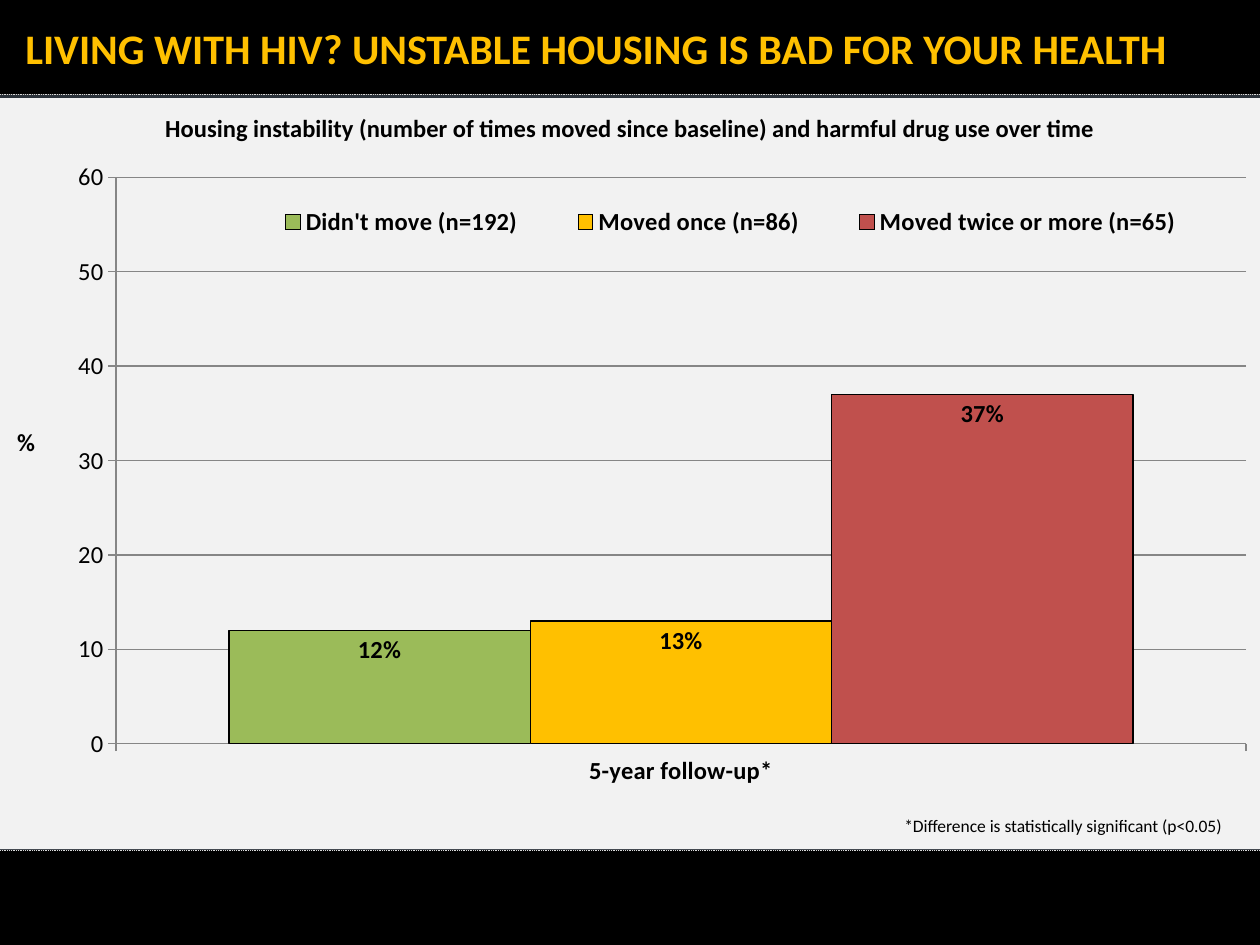
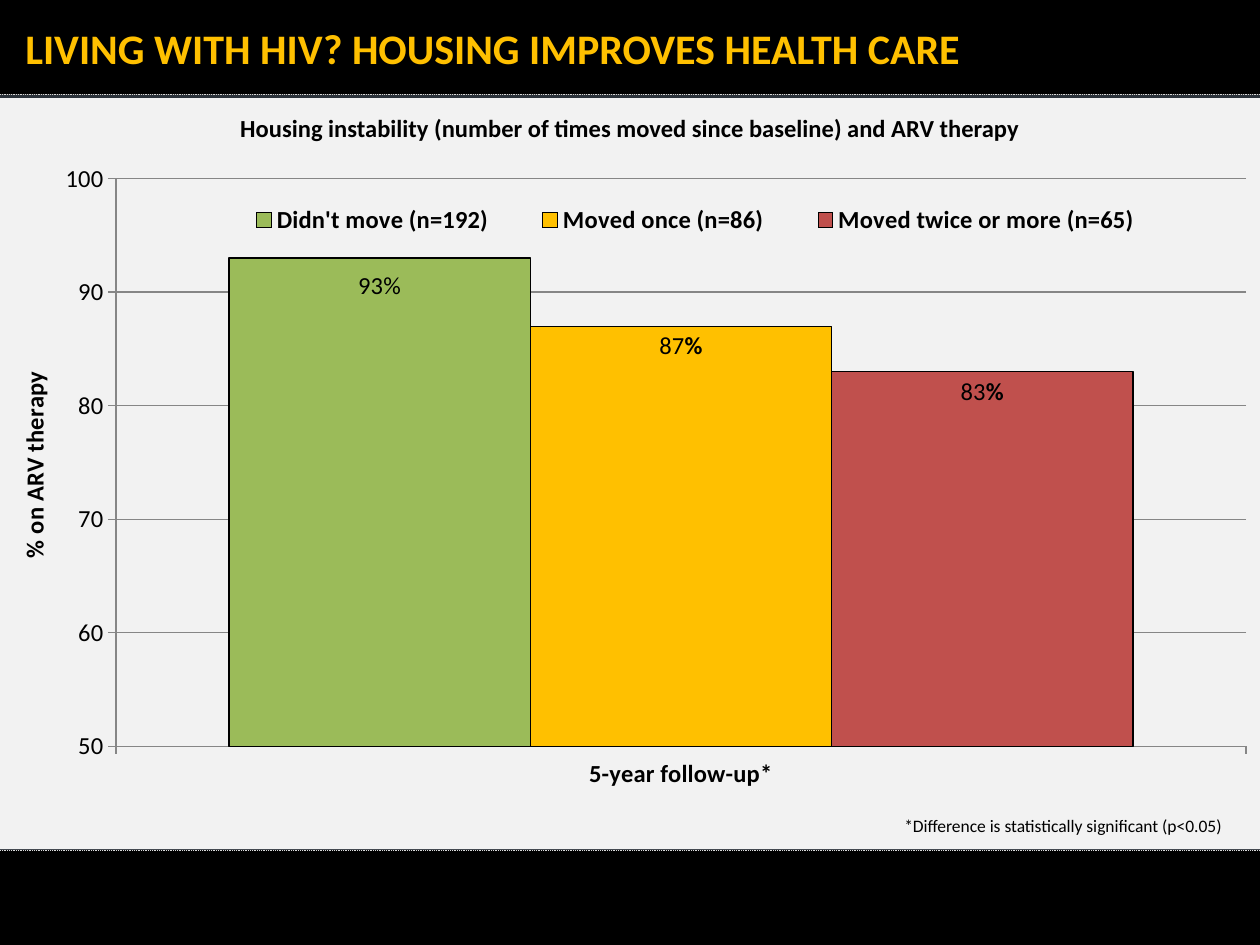
from lxml import etree
from pptx import Presentation
from pptx.chart.data import CategoryChartData
from pptx.dml.color import RGBColor
from pptx.enum.chart import XL_CHART_TYPE, XL_LABEL_POSITION, XL_LEGEND_POSITION, XL_TICK_MARK
from pptx.enum.dml import MSO_LINE
from pptx.enum.shapes import MSO_CONNECTOR, MSO_SHAPE
from pptx.enum.text import MSO_ANCHOR, MSO_AUTO_SIZE, PP_ALIGN
from pptx.oxml.ns import qn
from pptx.util import Cm, Pt

COLORS = {
    "band": "000000", "backdrop": "2C333B", "panel": "F2F2F2", "rule": "D9D9D9",
    "title": "FFC000", "text": "000000", "grid": "868686",
    "no_move": "9BBB59", "one_move": "FFC000", "more_moves": "C0504D",
}
WIDTH, HEIGHT = 25.4, 19.05
BAND = 1.91
TITLE_FONT = {"name": "Calibri", "size": Pt(24), "bold": True}
CHART_FONT = {"name": "Calibri", "size": Pt(14), "bold": False}
BOLD_FONT = {**CHART_FONT, "bold": True}
NOTE_FONT = {**CHART_FONT, "size": Pt(10)}
GROUPS = [
    ("Didn't move (n=192)", "no_move"),
    ("Moved once (n=86)", "one_move"),
    ("Moved twice or more (n=65)", "more_moves"),
]
CATEGORY = "5-year follow-up*"
FOOTNOTE = "*Difference is statistically significant (p<0.05)"

# Each bar is (value, number is bold, percent sign is bold).
SLIDES = [
    {
        "title": "LIVING WITH HIV? UNSTABLE HOUSING IS BAD FOR YOUR HEALTH",
        "heading": "Housing instability (number of times moved since baseline) "
                   "and harmful drug use over time",
        "box": (0, 2.11, WIDTH, 14.81),
        "bars": [(12, True, True), (13, True, True), (37, True, True)],
        "scale": (0, 60),
        "axis_title": "%", "axis_rotation": 0, "axis_title_at": (0.01, 0.43),
        "plot": (0.092, 0.099, 0.897, 0.771),
        "legend": (0.185, 0.12, 0.79, 0.08),
    },
    {
        "title": "LIVING WITH HIV? HOUSING IMPROVES HEALTH CARE",
        "heading": "Housing instability (number of times moved since baseline) "
                   "and ARV therapy",
        "box": (0, BAND, WIDTH, 15.24),
        "bars": [(93, False, False), (87, False, True), (83, False, True)],
        "scale": (50, 100),
        "axis_title": "% on ARV therapy", "axis_rotation": -90, "axis_title_at": (0.01, 0.36),
        "plot": (0.092, 0.111, 0.897, 0.751),
        "legend": (0.167, 0.126, 0.77, 0.08),
        "first_label_shift": (0, 0.01),
    },
]


def color(name):
    return RGBColor.from_string(COLORS[name])


def format_font(font, values, color_name="text"):
    for key, value in values.items():
        setattr(font, key, value)
    font.color.rgb = color(color_name)


def add_band(slide, top, height, fill):
    shape = slide.shapes.add_shape(MSO_SHAPE.RECTANGLE, 0, Cm(top), Cm(WIDTH), Cm(height))
    shape.shadow.inherit = False
    shape.fill.solid()
    shape.fill.fore_color.rgb = color(fill)
    shape.line.fill.background()
    return shape


def add_rule(slide, top):
    connector = slide.shapes.add_connector(
        MSO_CONNECTOR.STRAIGHT, 0, Cm(top), Cm(WIDTH), Cm(top))
    connector.line.color.rgb = color("rule")
    connector.line.width = Pt(0.5)
    connector.line.dash_style = MSO_LINE.ROUND_DOT
    etree.SubElement(connector.element.spPr, qn("a:effectLst"))
    return connector


def style_layout(layout, slide):
    """Draw the bands with the slide's shape tools, then move them to the layout."""
    bottom = HEIGHT - BAND
    parts = [
        add_band(slide, bottom, BAND, "band"),
        add_band(slide, BAND, bottom - BAND, "backdrop"),
        add_band(slide, 0, BAND, "band"),
        add_rule(slide, BAND),
        add_rule(slide, bottom),
        add_band(slide, 1.98, 15.14, "panel"),
    ]
    for index, part in enumerate(parts):
        part.element.xpath(".//p:cNvPr")[0].set("id", str(100 + index))
        layout.shapes.element.insert(2 + index, part.element)

    title = layout.placeholders[0]
    title.left, title.top, title.width, title.height = 0, 0, Cm(WIDTH), Cm(BAND)
    frame = title.text_frame
    frame_format = {
        "margin_left": Cm(0.51), "margin_right": Cm(0.51),
        "margin_top": Cm(0.25), "margin_bottom": Cm(0.25),
        "vertical_anchor": MSO_ANCHOR.MIDDLE, "auto_size": MSO_AUTO_SIZE.NONE,
    }
    for key, value in frame_format.items():
        setattr(frame, key, value)


def fill_title(slide, text):
    paragraph = slide.shapes.title.text_frame.paragraphs[0]
    paragraph.text = text
    paragraph.alignment = PP_ALIGN.LEFT
    format_font(paragraph.runs[0].font, TITLE_FONT, "title")


def add_text(slide, box, text, font, alignment):
    frame = slide.shapes.add_textbox(*map(Cm, box)).text_frame
    frame.word_wrap = True
    paragraph = frame.paragraphs[0]
    paragraph.text = text
    paragraph.alignment = alignment
    format_font(paragraph.runs[0].font, font)


def set_layout(parent, index, box, inner=False):
    """Place a chart part by fractions of the chart: x, y and optionally w, h."""
    for old in parent.findall(qn("c:layout")):
        parent.remove(old)
    layout = etree.Element(qn("c:layout"))
    manual = etree.SubElement(layout, qn("c:manualLayout"))
    values = [("layoutTarget", "inner")] if inner else []
    if parent.tag != qn("c:dLbl"):
        values += [("xMode", "edge"), ("yMode", "edge")]
    values += zip("xywh", box)
    for name, value in values:
        etree.SubElement(manual, qn(f"c:{name}")).set("val", str(value))
    parent.insert(index, layout)


def format_axes(chart, content):
    for axis, font in ((chart.category_axis, BOLD_FONT), (chart.value_axis, CHART_FONT)):
        axis.major_tick_mark = XL_TICK_MARK.OUTSIDE
        axis.minor_tick_mark = XL_TICK_MARK.NONE
        axis.format.line.color.rgb = color("grid")
        format_font(axis.tick_labels.font, font)
    axis = chart.value_axis
    axis.minimum_scale, axis.maximum_scale = content["scale"]
    axis.major_unit = 10
    axis.has_major_gridlines = True
    axis.major_gridlines.format.line.color.rgb = color("grid")
    paragraph = axis.axis_title.text_frame.paragraphs[0]
    run = paragraph.add_run()
    run.text = content["axis_title"]
    format_font(run.font, BOLD_FONT)
    title = chart.element.xpath(".//c:valAx/c:title")[0]
    body = title.xpath(".//a:bodyPr")[0]
    body.set("rot", str(content["axis_rotation"] * 60000))
    body.set("vert", "horz")
    set_layout(title, 1, content["axis_title_at"])


def format_bar(series, fill, bar):
    series.format.fill.solid()
    series.format.fill.fore_color.rgb = color(fill)
    series.format.line.color.rgb = color("text")
    series.format.line.width = Pt(0.75)
    value, bold_number, bold_percent = bar
    label = series.points[0].data_label
    paragraph = label.text_frame.paragraphs[0]
    for text, bold in ((str(value), bold_number), ("%", bold_percent)):
        run = paragraph.add_run()
        run.text = text
        format_font(run.font, {**CHART_FONT, "bold": bold})
    label.position = XL_LABEL_POSITION.INSIDE_END


def add_bar_chart(slide, content):
    data = CategoryChartData()
    data.categories = [CATEGORY]
    for (name, _), bar in zip(GROUPS, content["bars"]):
        data.add_series(name, [bar[0]])
    chart = slide.shapes.add_chart(
        XL_CHART_TYPE.COLUMN_CLUSTERED, *map(Cm, content["box"]), data).chart
    format_font(chart.font, CHART_FONT)
    chart.has_title = False
    plot = chart.plots[0]
    plot.gap_width, plot.overlap, plot.vary_by_categories = 75, 0, False
    for series, (_, fill), bar in zip(plot.series, GROUPS, content["bars"]):
        format_bar(series, fill, bar)
    format_axes(chart, content)
    chart.has_legend = True
    chart.legend.position = XL_LEGEND_POSITION.RIGHT
    chart.legend.include_in_layout = False
    format_font(chart.legend.font, BOLD_FONT)
    set_layout(chart.element.xpath(".//c:legend")[0], 1, content["legend"])
    set_layout(chart.element.xpath(".//c:plotArea")[0], 0, content["plot"], inner=True)
    if "first_label_shift" in content:
        set_layout(chart.element.xpath(".//c:dLbl")[0], 1, content["first_label_shift"])


def fill_chart_slide(slide, content):
    fill_title(slide, content["title"])
    add_bar_chart(slide, content)
    add_text(slide, (17.98, 16.31, 7.11, 0.69), FOOTNOTE, NOTE_FONT, PP_ALIGN.LEFT)
    add_text(slide, (0, 2.16, WIDTH, 0.86), content["heading"], BOLD_FONT, PP_ALIGN.CENTER)


def main():
    presentation = Presentation()
    presentation.slide_width, presentation.slide_height = Cm(WIDTH), Cm(HEIGHT)
    layout = presentation.slide_layouts.get_by_name("Title Only")
    slides = [presentation.slides.add_slide(layout) for _ in SLIDES]
    style_layout(layout, slides[0])
    for slide, content in zip(slides, SLIDES):
        fill_chart_slide(slide, content)
    presentation.save("out.pptx")


if __name__ == "__main__":
    main()
